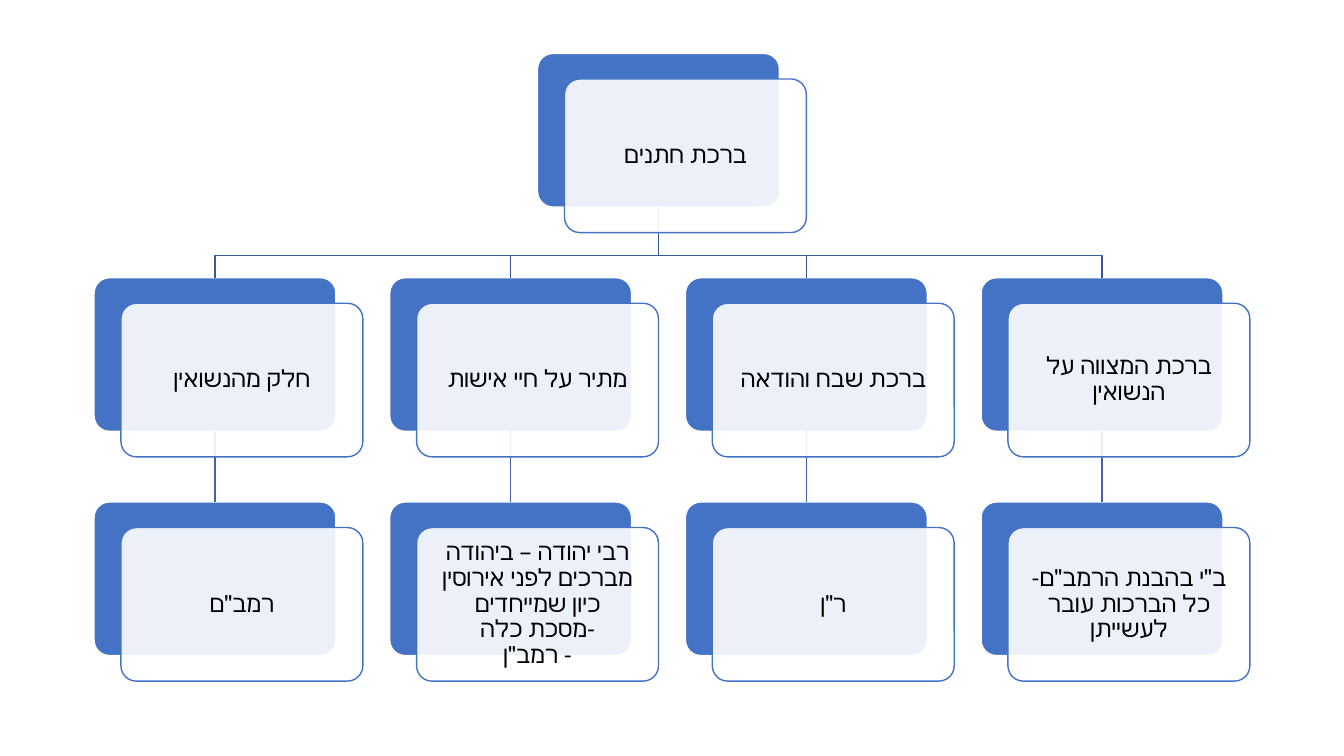
"""Build the chart of opinions on the grooms' blessing."""
from dataclasses import dataclass

from lxml import etree
from pptx import Presentation, util as u
from pptx.dml.color import RGBColor
from pptx.enum import lang, shapes, text
from pptx.oxml.ns import qn
from pptx.shapes.autoshape import Shape
from pptx.shapes.shapetree import SlideShapes

BLUE = RGBColor(0x44, 0x72, 0xC4)
BRANCH_BLUE = RGBColor(0x36, 0x5B, 0x9D)
STEM_BLUE = RGBColor(0x3E, 0x67, 0xB2)
WHITE = RGBColor(0xFF, 0xFF, 0xFF)
BLACK = RGBColor(0, 0, 0)

WIDTH, HEIGHT = u.Inches(13.333), u.Inches(7.5)
LEFT, COLUMN = 0.07 * WIDTH, 0.22 * WIDTH
CARD_WIDTH, CARD_HEIGHT = int(0.18 * WIDTH), int(0.1143 * WIDTH)
TOP, ROW = u.Inches(0.53), 1.46 * CARD_HEIGHT
SHIFT_X = 0.02 * WIDTH
SHIFT_Y = 0.95 * SHIFT_X
FONT = "Calibri"


@dataclass(frozen=True)
class Card:
    """A two-layer card at a column and row of the grid."""
    column: float
    row: int
    wording: str

    @property
    def left(self) -> int:
        return int(LEFT + self.column * COLUMN)

    @property
    def top(self) -> int:
        return int(TOP + self.row * ROW)

    @property
    def centre(self) -> int:
        return self.left + CARD_WIDTH // 2


BLESSING = Card(1.5, 0, "ברכת חתנים")
REASONS = [Card(column, 1, wording) for column, wording in enumerate((
    "חלק מהנשואין",
    "מתיר על חיי אישות",
    "ברכת שבח והודאה",
    "ברכת המצווה על הנשואין",
))]
SOURCES = [Card(column, 2, wording) for column, wording in enumerate((
    'רמב"ם',
    'רבי יהודה – ביהודה מברכים לפני אירוסין כיון שמייחדים\n-מסכת כלה\n- רמב"ן',
    'ר"ן',
    'ב"י בהבנת הרמב"ם- כל הברכות עובר לעשייתן',
))]


def add_layer(canvas: SlideShapes, left: float, top: float,
              fill: RGBColor, outline: RGBColor) -> Shape:
    """Draw one rounded layer of a card."""
    layer = canvas.add_shape(shapes.MSO_SHAPE.ROUNDED_RECTANGLE,
                             int(left), int(top), CARD_WIDTH, CARD_HEIGHT)
    layer.adjustments[0] = 0.1
    layer.shadow.inherit = False
    layer.fill.solid()
    layer.fill.fore_color.rgb = fill
    layer.line.color.rgb = outline
    layer.line.width = u.Pt(1)
    return layer


def add_back(canvas: SlideShapes, card: Card) -> Shape:
    """Draw the blue layer of a card."""
    return add_layer(canvas, card.left, card.top, BLUE, WHITE)


def add_front(canvas: SlideShapes, card: Card) -> None:
    """Draw the translucent layer of a card with its wording."""
    front = add_layer(canvas, card.left + SHIFT_X, card.top + SHIFT_Y, WHITE, BLUE)
    tint = front.fill._xPr.find(qn("a:solidFill"))[0]
    etree.SubElement(tint, qn("a:alpha"), val="90000")
    frame = front.text_frame
    frame.word_wrap = True
    frame.vertical_anchor = text.MSO_ANCHOR.MIDDLE
    frame.margin_left = frame.margin_right = u.Inches(0.07)
    frame.margin_top = frame.margin_bottom = u.Inches(0.07)
    wording = frame.paragraphs[0]
    wording.text = card.wording
    wording.alignment = text.PP_ALIGN.CENTER
    wording.line_spacing = 0.9
    wording.font.size = u.Pt(17)
    wording.font.color.rgb = BLACK
    wording.font.name = FONT
    wording.font.language_id = lang.MSO_LANGUAGE_ID.HEBREW
    wording._p.get_or_add_pPr().set("rtl", "1")


def add_branch(canvas: SlideShapes, parent: Card, child: Card) -> None:
    """Draw the bent line from a parent down to a child."""
    bend = int(child.top - 0.1 * ROW)
    outline = canvas.build_freeform(parent.centre, parent.top + CARD_HEIGHT)
    outline.add_line_segments([(parent.centre, bend), (child.centre, bend),
                               (child.centre, child.top)], close=False)
    branch = outline.convert_to_shape()
    branch.shadow.inherit = False
    branch.fill.background()
    branch.line.color.rgb = BRANCH_BLUE
    branch.line.width = u.Pt(1)


def add_stem(canvas: SlideShapes, upper: Shape, lower: Shape) -> None:
    """Join the bottom of one layer to the top of another."""
    stem = canvas.add_connector(shapes.MSO_CONNECTOR.STRAIGHT, 0, 0, 0, 0)
    stem.begin_connect(upper, 2)
    stem.end_connect(lower, 0)
    stem.line.color.rgb = STEM_BLUE
    stem.line.width = u.Pt(1)
    etree.SubElement(stem._element.spPr, qn("a:effectLst"))


def main() -> None:
    """Draw the chart and save it."""
    deck = Presentation()
    deck.slide_width, deck.slide_height = WIDTH, HEIGHT
    canvas = deck.slides.add_slide(deck.slide_layouts[6]).shapes
    add_back(canvas, BLESSING)
    for reason, source in zip(REASONS, SOURCES):
        add_stem(canvas, add_back(canvas, reason), add_back(canvas, source))
        add_branch(canvas, BLESSING, reason)
    for card in (BLESSING, *REASONS, *SOURCES):
        add_front(canvas, card)
    deck.save("out.pptx")


if __name__ == "__main__":
    main()
